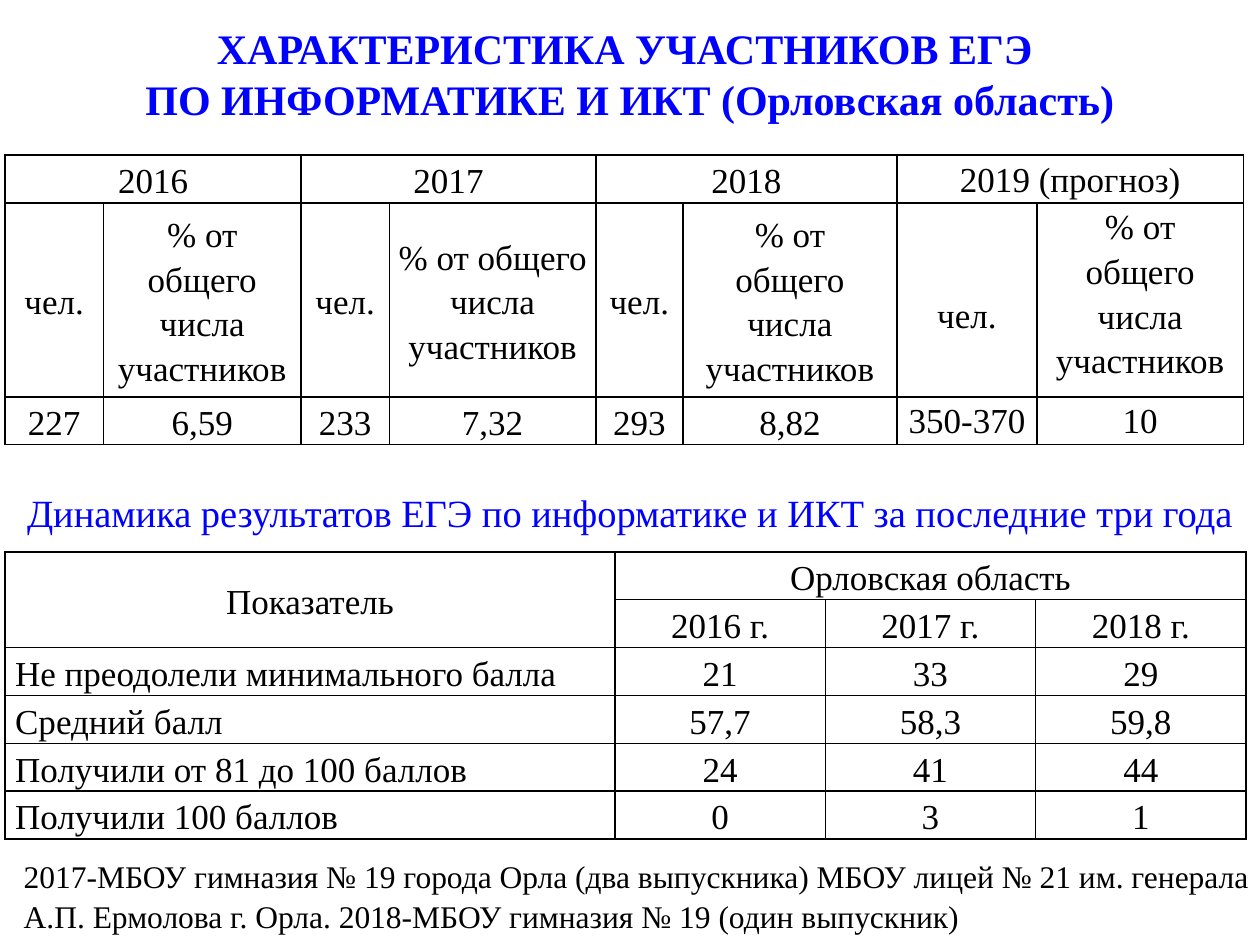
from dataclasses import dataclass

from lxml.etree import SubElement
from pptx import Presentation
from pptx.dml.color import RGBColor
from pptx.enum.text import MSO_ANCHOR as Anchor, MSO_AUTO_SIZE as Fit, PP_ALIGN as Align
from pptx.oxml.ns import qn
from pptx.util import Inches, Pt

BLUE = RGBColor(0x00, 0x00, 0xFF)
BLACK = RGBColor(0x00, 0x00, 0x00)
FONT = "Times New Roman"
SHARE = "% от общего числа участников"
SPLIT = "% от\nобщего числа участников"


@dataclass
class Grid:
    top: float
    cols: list[float]
    heights: list[float]
    rows: list[list[str]]
    spans: list[tuple[int, int, int, int]]
    inset: float


@dataclass
class Label:
    text: str
    box: tuple[float, float, float, float]
    size: int
    color: RGBColor
    align: Align = Align.CENTER
    bold: bool = False
    line: float = 1.0
    indent: float = 0


def style(frame, size: int, color: RGBColor, align: Align, line: float, bold: bool = False) -> None:
    look = {"name": FONT, "size": Pt(size), "bold": bold}
    for para in frame.paragraphs:
        para.alignment = align
        para.line_spacing = line
        for run in para.runs:
            for key, value in look.items():
                setattr(run.font, key, value)
            run.font.color.rgb = color


def fill_label(shape, label: Label) -> None:
    shape.left, shape.top, shape.width, shape.height = map(Inches, label.box)
    frame = shape.text_frame
    frame.text = label.text
    form = {"word_wrap": True, "auto_size": Fit.NONE, "vertical_anchor": Anchor.TOP}
    for key, value in form.items():
        setattr(frame, key, value)
    style(frame, label.size, label.color, label.align, label.line, label.bold)
    if label.indent:
        props = frame.paragraphs[0]._p.get_or_add_pPr()
        props.set("marL", str(Inches(label.indent)))
        props.set("indent", "0")


def add_edges(cell) -> None:
    props = cell._tc.get_or_add_tcPr()
    for side in ("a:lnL", "a:lnR", "a:lnT", "a:lnB"):
        edge = SubElement(props, qn(side), w=str(Pt(1)))
        paint = SubElement(edge, qn("a:solidFill"))
        SubElement(paint, qn("a:srgbClr"), val=str(BLACK))


def add_grid(slide, grid: Grid):
    box = (0.04, grid.top, sum(grid.cols), sum(grid.heights))
    table = slide.shapes.add_table(len(grid.rows), len(grid.cols), *map(Inches, box)).table
    table.first_row = table.horz_banding = False
    for col, width in zip(table.columns, grid.cols):
        col.width = Inches(width)
    for row, height in zip(table.rows, grid.heights):
        row.height = Inches(height)
    form = {
        "margin_left": Inches(grid.inset), "margin_right": Inches(grid.inset),
        "margin_top": 0, "margin_bottom": 0, "vertical_anchor": Anchor.MIDDLE,
    }
    for r, texts in enumerate(grid.rows):
        for c, text in enumerate(texts):
            cell = table.cell(r, c)
            cell.text = text
            for key, value in form.items():
                setattr(cell, key, value)
            style(cell.text_frame, 20, BLACK, Align.CENTER, 1.15)
            add_edges(cell)
            cell.fill.background()
    for r, c, last_r, last_c in grid.spans:
        table.cell(r, c).merge(table.cell(last_r, last_c))
    return table


def main() -> None:
    deck = Presentation()
    deck.slide_width, deck.slide_height = Inches(10), Inches(7.5)
    slide = deck.slides.add_slide(deck.slide_layouts[5])

    # Title
    fill_label(slide.shapes.title, Label(
        "ХАРАКТЕРИСТИКА УЧАСТНИКОВ ЕГЭ \vПО ИНФОРМАТИКЕ И ИКТ (Орловская область)",
        (0, 0.13, 10, 0.91), 24, BLUE, bold=True))

    # Exam takers by year
    takers = add_grid(slide, Grid(
        top=1.23,
        cols=[0.78, 1.57, 0.7, 1.64, 0.69, 1.7, 1.11, 1.64],
        heights=[0.38, 1.54, 0.38],
        rows=[
            ["2016", "", "2017", "", "2018", "", "2019 (прогноз)", ""],
            ["чел.", SHARE, "чел.", SHARE, "чел.", SPLIT, "чел.", SPLIT],
            ["227", "6,59", "233", "7,32", "293", "8,82", "350-370", "10"],
        ],
        spans=[(0, c, 0, c + 1) for c in range(0, 8, 2)],
        inset=0.07))
    # The forecast columns hang from the top
    for r in range(3):
        for c in (6, 7):
            takers.cell(r, c).vertical_anchor = Anchor.TOP
    takers.cell(1, 6).margin_top = Inches(0.7)

    # Results over three years
    scores = add_grid(slide, Grid(
        top=4.38,
        cols=[4.84] + [1.67] * 3,
        heights=[0.38] * 6,
        rows=[
            ["Показатель", "Орловская область", "", ""],
            ["", "2016 г.", "2017 г.", "2018 г."],
            ["Не преодолели минимального балла", "21", "33", "29"],
            ["Средний балл", "57,7", "58,3", "59,8"],
            ["Получили от 81 до 100 баллов", "24", "41", "44"],
            ["Получили 100 баллов", "0", "3", "1"],
        ],
        spans=[(0, 0, 1, 0), (0, 1, 0, 3)],
        inset=0.08))
    for r in range(2, 6):
        scores.cell(r, 0).text_frame.paragraphs[0].alignment = Align.LEFT

    # Subtitle and footnote
    labels = [
        Label("Динамика результатов ЕГЭ по информатике и ИКТ за последние три года",
              (0, 3.83, 10, 0.47), 22, BLUE),
        Label("2017-МБОУ гимназия № 19 города Орла (два выпускника) МБОУ лицей № 21 "
              "им. генерала А.П. Ермолова г. Орла. 2018-МБОУ гимназия № 19 (один выпускник)",
              (0, 6.73, 10.04, 0.75), 18, BLACK, Align.LEFT, line=1.07, indent=0.09),
    ]
    for label in labels:
        fill_label(slide.shapes.add_textbox(0, 0, 0, 0), label)

    deck.save("out.pptx")


if __name__ == "__main__":
    main()
